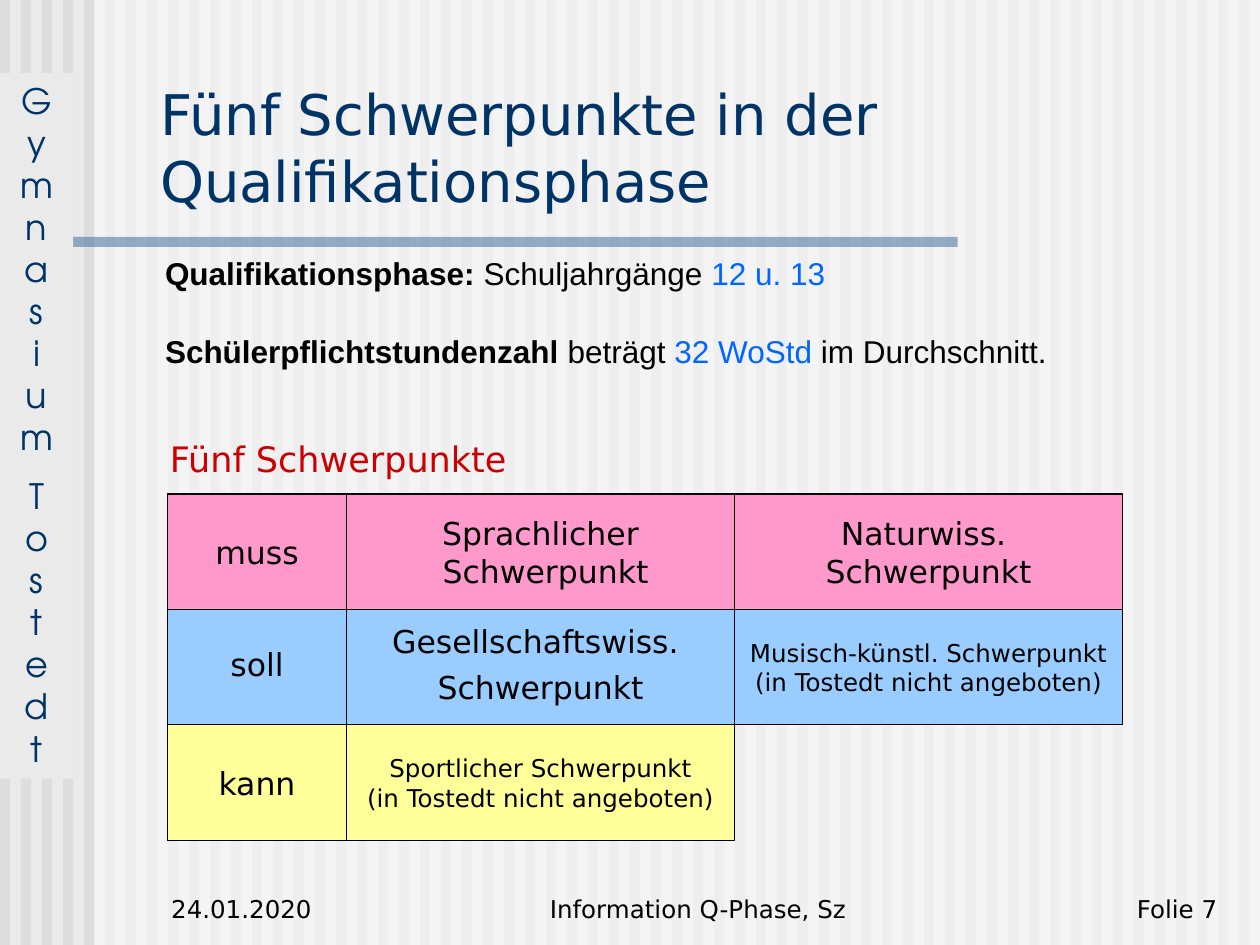
"""Build the slide on the five focus areas of the qualification phase."""
from lxml import etree
from pptx import Presentation
from pptx.dml.color import RGBColor
from pptx.enum.shapes import MSO_SHAPE
from pptx.enum.text import MSO_ANCHOR, MSO_AUTO_SIZE, PP_ALIGN
from pptx.oxml.ns import qn
from pptx.util import Inches, Pt

RECT = MSO_SHAPE.RECTANGLE
TOP, MIDDLE, BOTTOM = MSO_ANCHOR.TOP, MSO_ANCHOR.MIDDLE, MSO_ANCHOR.BOTTOM
LEFT, CENTER, RIGHT = PP_ALIGN.LEFT, PP_ALIGN.CENTER, PP_ALIGN.RIGHT
NOFIT = MSO_AUTO_SIZE.NONE
SANS, ARIAL, SIDE = "DejaVu Sans", "Arial", "TeX Gyre Adventor"
COLORS = {
    "ground": "EAEAEA", "stripe": "DDDDDD", "white": "FFFFFF",
    "bar": "336699", "navy": "003366", "black": "000000",
    "blue": "0066FF", "red": "CC0000",
    "pink": "FF99CC", "sky": "99CCFF", "yellow": "FFFF99",
}


def block(x, y, w, h, color, alpha=None):
    shape = slide.shapes.add_shape(
        RECT, Inches(x), Inches(y), Inches(w), Inches(h))
    shape.shadow.inherit = False
    shape.fill.solid()
    shape.fill.fore_color.rgb = RGBColor.from_string(COLORS[color])
    shape.line.fill.background()
    if alpha:
        tint = shape.element.spPr.find(qn("a:solidFill"))[0]
        etree.SubElement(tint, qn("a:alpha"), val=str(alpha * 1000))
    return shape


def write(shape, lines, size, color="black", align=LEFT, anchor=TOP,
          font=SANS, gap=0, pitch=None, wrap=True):
    frame = shape.text_frame
    frame.auto_size = NOFIT
    frame.word_wrap = wrap
    frame.vertical_anchor = anchor
    for i, line in enumerate(lines):
        para = frame.add_paragraph() if i else frame.paragraphs[0]
        para.text = line
        para.alignment = align
        para.space_before = Pt(gap if i else 0)
        if pitch:
            para.line_spacing = pitch
        para.font.size = Pt(size)
        para.font.name = font
        para.font.color.rgb = RGBColor.from_string(COLORS[color])


prs = Presentation()
prs.slide_width, prs.slide_height = Inches(10), Inches(7.5)
slide = prs.slides.add_slide(prs.slide_layouts[1])
slide.background.fill.solid()
slide.background.fill.fore_color.rgb = RGBColor.from_string(COLORS["ground"])

for i in range(60):
    block(i / 6, 0, 0.08, 7.5, "stripe")
block(0.75, 0, 9.25, 7.5, "white", 50)
block(0, 1.88, 7.6, 0.08, "bar", 50)
side = block(0, 0.58, 0.58, 5.6, "ground")
words = ["\v".join(word) for word in ("Gymnasium", "Tostedt")]
write(side, words, 20, "navy", CENTER, font=SIDE, gap=10)

title, body = slide.shapes.title, slide.placeholders[1]
tree = title.element.getparent()
for holder, x, y, w, h in (
    (body, 0.83, 2, 8.25, 1.42),
    (title, 1.17, 0.58, 8.27, 1.17),
):
    tree.append(holder.element)
    holder.left, holder.top = Inches(x), Inches(y)
    holder.width, holder.height = Inches(w), Inches(h)
write(title, ["Fünf Schwerpunkte in der Qualifikationsphase"], 32, "navy")

facts = [
    [("Qualifikationsphase:", True, "black"),
     (" Schuljahrgänge ", False, "black"),
     ("12 u. 13", False, "blue")],
    [("Schülerpflichtstundenzahl", True, "black"),
     (" beträgt ", False, "black"),
     ("32 WoStd", False, "blue"),
     (" im Durchschnitt.", False, "black")],
]
frame = body.text_frame
frame.auto_size = NOFIT
for i, fact in enumerate(facts):
    para = frame.add_paragraph() if i else frame.paragraphs[0]
    props = para._p.get_or_add_pPr()
    props.set("marL", str(Inches(0.38)))
    props.set("indent", "0")
    etree.SubElement(props, qn("a:buNone"))
    para.line_spacing = 0.9
    para.space_before = Pt(25 if i else 0)
    para.font.size = Pt(18)
    para.font.name = ARIAL
    for text, bold, color in fact:
        run = para.add_run()
        run.text = text
        run.font.bold = bold
        run.font.color.rgb = RGBColor.from_string(COLORS[color])

labels = [
    ("Fünf Schwerpunkte", 1.25, 3.42, 3.25, 0.43, 20, "red", LEFT, TOP),
    ("24.01.2020", 1.26, 6.88, 2.08, 0.5, 14, "black", LEFT, BOTTOM),
    ("Information Q-Phase, Sz", 3.58, 6.88, 3.92, 0.5, 14, "black",
     CENTER, BOTTOM),
    ("Folie 7", 7.68, 6.88, 2.08, 0.5, 14, "black", RIGHT, BOTTOM),
]
for text, x, y, w, h, size, color, align, anchor in labels:
    label = slide.shapes.add_textbox(
        Inches(x), Inches(y), Inches(w), Inches(h))
    write(label, [text], size, color, align, anchor)

absent = "(in Tostedt nicht angeboten)"
rows = [
    ("pink", [(["muss"], 18, None),
              (["Sprachlicher", " Schwerpunkt"], 18, None),
              (["Naturwiss. ", "Schwerpunkt"], 18, None)]),
    ("sky", [(["soll"], 18, 0.8),
             (["Gesellschaftswiss. ", "Schwerpunkt"], 18, 0.8),
             (["Musisch-künstl. Schwerpunkt", absent], 14, None)]),
    ("yellow", [(["kann"], 18, None),
                (["Sportlicher Schwerpunkt", absent], 14, None)]),
]
cols = [(1.33, 1.42), (2.75, 3.08), (5.83, 3.08)]
high = 2.75 / 3
for i, (color, cells) in enumerate(rows):
    for (x, w), (lines, size, pitch) in zip(cols, cells):
        cell = block(x, 3.92 + i * high, w, high, color)
        cell.line.color.rgb = RGBColor.from_string(COLORS["black"])
        cell.line.width = Pt(0.75)
        write(cell, lines, size, align=CENTER, anchor=MIDDLE,
              gap=9 if pitch else 0, pitch=pitch, wrap=False)

prs.save("out.pptx")
